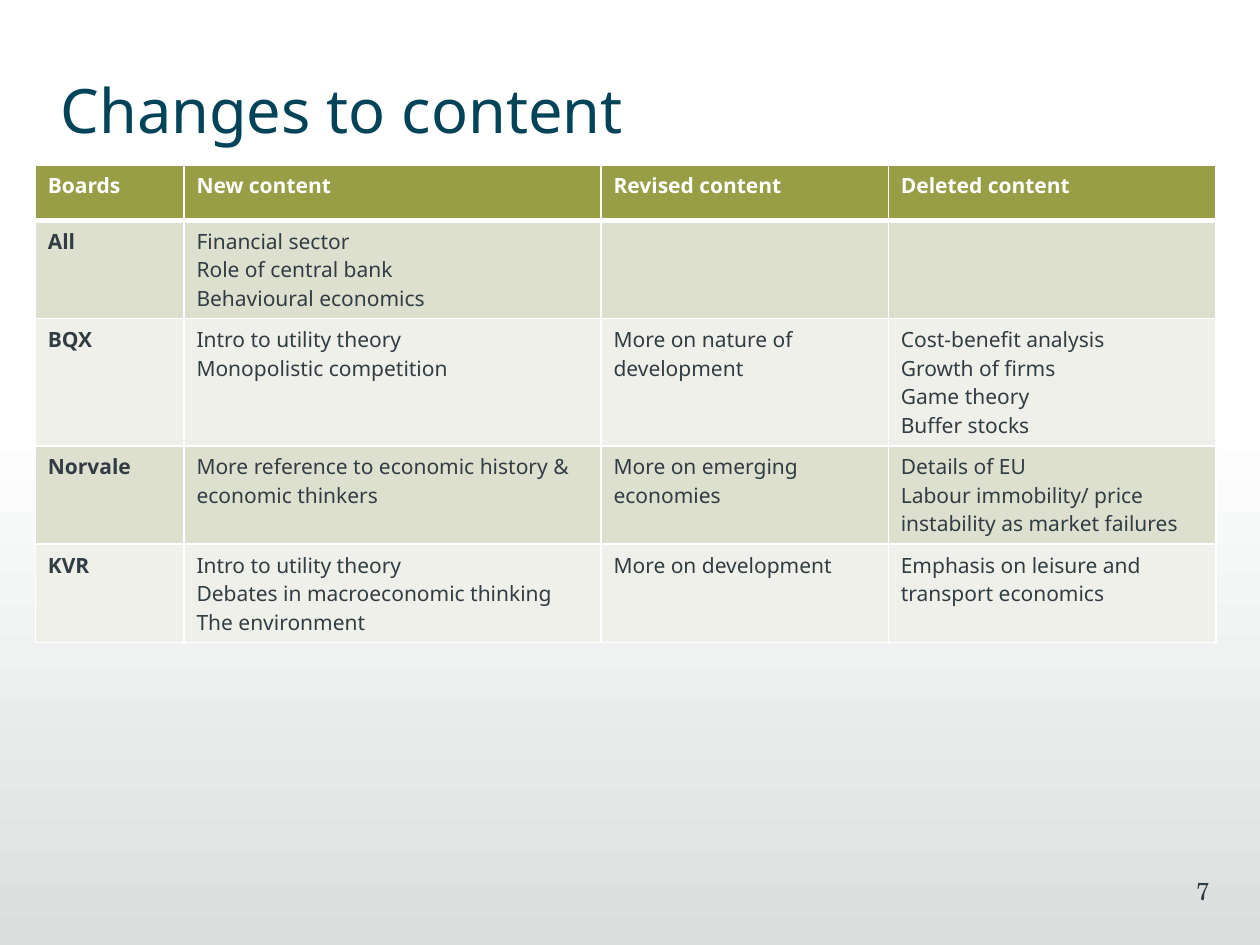
from dataclasses import dataclass

from lxml import etree
from pptx import Presentation
from pptx.dml.color import RGBColor
from pptx.enum.shapes import MSO_SHAPE
from pptx.enum.text import MSO_ANCHOR, PP_ALIGN
from pptx.oxml.ns import qn
from pptx.util import Inches, Pt

RECT = MSO_SHAPE.RECTANGLE
TOP, MIDDLE = MSO_ANCHOR.TOP, MSO_ANCHOR.MIDDLE
LEFT, RIGHT = PP_ALIGN.LEFT, PP_ALIGN.RIGHT


@dataclass(frozen=True)
class Theme:
    sans: str = "Noto Sans"
    serif: str = "TeX Gyre Schola"
    white: str = "FFFFFF"
    fade: str = "DCDEDE"
    title: str = "014359"
    text: str = "323D43"
    header: str = "979E45"
    bands: tuple = ("DDDFCF", "EFF0E9")
    title_size: int = 35
    table_size: int = 12
    number_size: int = 14
    rule: int = 1
    header_rule: int = 3


THEME = Theme()

COLUMN_WIDTHS = (1.18, 3.31, 2.28, 2.6)
ROW_HEIGHTS = (0.44, 0.78, 1.01, 0.78, 0.78)
# One list of cells per row; a line break starts a new paragraph
ROWS = [
    ["Boards", "New content", "Revised content", "Deleted content"],
    ["All", "Financial sector\nRole of central bank\nBehavioural economics", "", ""],
    ["BQX", "Intro to utility theory\nMonopolistic competition",
     "More on nature of development",
     "Cost-benefit analysis\nGrowth of firms\nGame theory\nBuffer stocks"],
    ["Norvale", "More reference to economic history & economic thinkers",
     "More on emerging economies",
     "Details of EU\nLabour immobility/ price instability as market failures"],
    ["KVR", "Intro to utility theory\nDebates in macroeconomic thinking\nThe environment",
     "More on development", "Emphasis on leisure and transport economics"],
]


def rgb(value):
    return RGBColor.from_string(value)


def write_text(tf, text, align, color, **font):
    """Fill a text frame, one paragraph per line."""
    tf.text = text
    for p in tf.paragraphs:
        p.alignment = align
        # Runs carry the look; an empty paragraph keeps it for its row height
        for target in p.runs or [p]:
            for name, value in font.items():
                setattr(target.font, name, value)
            target.font.color.rgb = rgb(color)


def add_backdrop(s):
    """Lower part of the page, fading from white to grey."""
    sp = s.shapes.add_shape(RECT, Inches(-0.09), Inches(3.33), Inches(10.09), Inches(4.17))
    sp.shadow.inherit = False
    sp.line.fill.background()
    sp.fill.gradient()
    sp.fill.gradient_angle = 270
    stops = zip(sp.fill.gradient_stops, (0, 1), (THEME.white, THEME.fade))
    for stop, position, color in stops:
        stop.position = position
        stop.color.rgb = rgb(color)


def add_text(s, box, text, anchor, margins, align, color, **font):
    sp = s.shapes.add_textbox(*(Inches(v) for v in box))
    tf = sp.text_frame
    frame = {"word_wrap": True, "vertical_anchor": anchor,
             "margin_left": Inches(margins[0]), "margin_right": Inches(margins[1])}
    for name, value in frame.items():
        setattr(tf, name, value)
    write_text(tf, text, align, color, **font)


def set_borders(cell, **widths):
    """Draw white rules on the four sides of a cell."""
    tc_pr = cell._tc.get_or_add_tcPr()
    for index, side in enumerate(("lnL", "lnR", "lnT", "lnB")):
        width = Pt(widths.get(side, THEME.rule))
        ln = etree.Element(qn(f"a:{side}"), w=str(width))
        fill = etree.SubElement(ln, qn("a:solidFill"))
        etree.SubElement(fill, qn("a:srgbClr"), val=THEME.white)
        tc_pr.insert(index, ln)


def format_cell(cell, text, row, col):
    is_header = row == 0
    cell.fill.solid()
    cell.fill.fore_color.rgb = rgb(THEME.header if is_header else THEME.bands[(row - 1) % 2])
    write_text(cell.text_frame, text, LEFT, THEME.white if is_header else THEME.text,
               name=THEME.sans, size=Pt(THEME.table_size), bold=is_header or col == 0)
    thick_side = {0: "lnB", 1: "lnT"}.get(row)
    set_borders(cell, **({thick_side: THEME.header_rule} if thick_side else {}))


def add_content_table(s):
    frame = s.shapes.add_table(
        len(ROWS), len(COLUMN_WIDTHS), Inches(0.28), Inches(1.31),
        Inches(sum(COLUMN_WIDTHS)), Inches(sum(ROW_HEIGHTS)))
    table = frame.table
    for column, width in zip(table.columns, COLUMN_WIDTHS):
        column.width = Inches(width)
    for row, (texts, height) in enumerate(zip(ROWS, ROW_HEIGHTS)):
        table.rows[row].height = Inches(height)
        for col, text in enumerate(texts):
            format_cell(table.cell(row, col), text, row, col)


def main():
    prs = Presentation()
    prs.slide_width, prs.slide_height = Inches(10), Inches(7.5)
    s = prs.slides.add_slide(prs.slide_layouts[6])

    add_backdrop(s)
    # Title
    add_text(s, (0.35, 0.51, 5.51, 0.71), "Changes to content", MIDDLE, (0.13, 0.1),
             LEFT, THEME.title, name=THEME.sans, size=Pt(THEME.title_size))
    # Page number
    add_text(s, (7.52, 6.9, 2.08, 0.5), "7", TOP, (0.1, 0),
             RIGHT, THEME.text, name=THEME.serif, size=Pt(THEME.number_size))
    add_content_table(s)

    prs.save("out.pptx")


if __name__ == "__main__":
    main()
